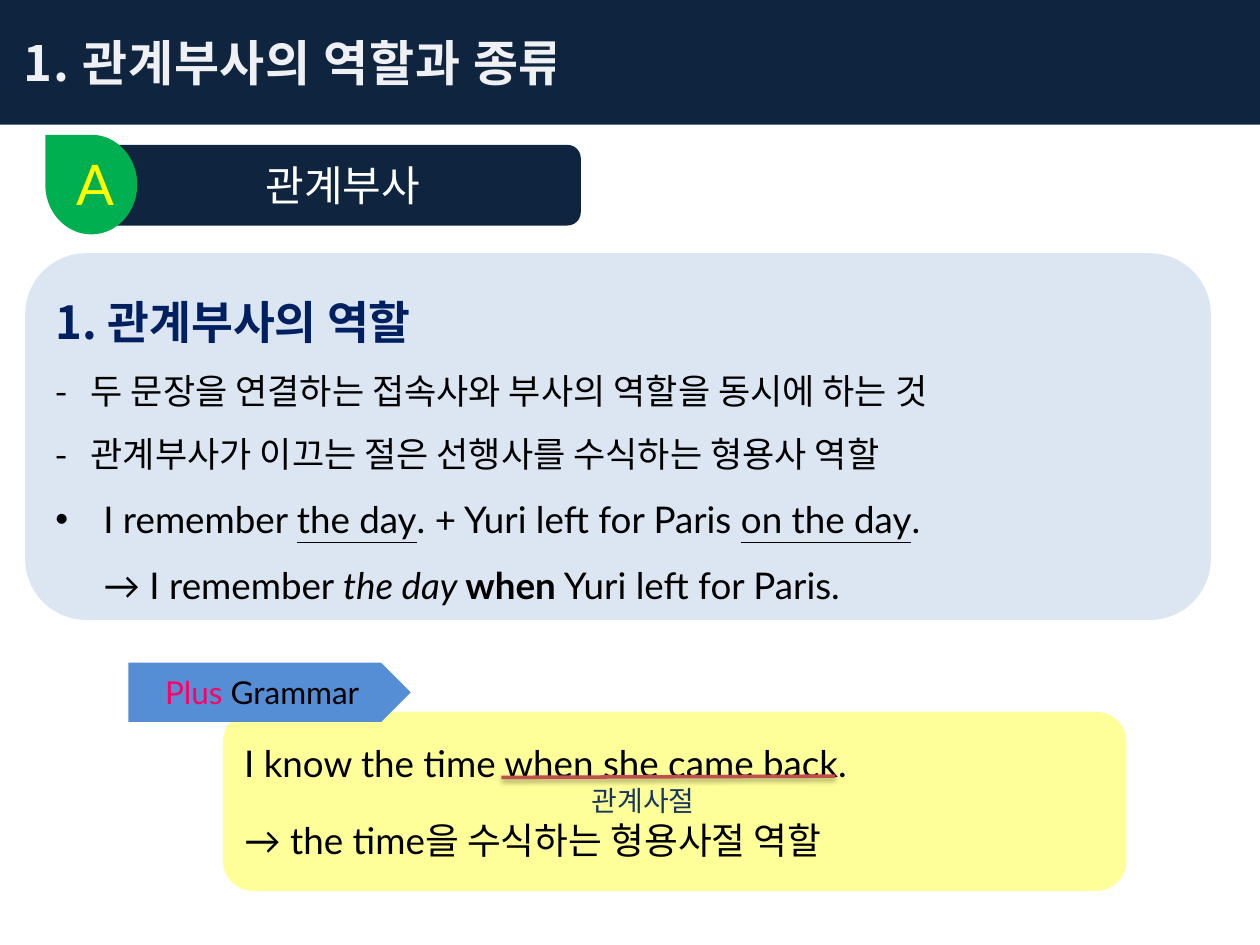
from lxml import etree
from pptx import Presentation
from pptx.dml.color import RGBColor
from pptx.enum.shapes import MSO_CONNECTOR, MSO_SHAPE
from pptx.enum.text import MSO_ANCHOR, PP_ALIGN
from pptx.oxml.ns import qn
from pptx.util import Inches, Pt

ROUND = MSO_SHAPE.FLOWCHART_ALTERNATE_PROCESS
RECT, TEAR, TAG = MSO_SHAPE.RECTANGLE, MSO_SHAPE.TEAR, MSO_SHAPE.PENTAGON
LINE = MSO_CONNECTOR.STRAIGHT
MID, TOP = MSO_ANCHOR.MIDDLE, MSO_ANCHOR.TOP
LEFT, CENTER, FULL = PP_ALIGN.LEFT, PP_ALIGN.CENTER, PP_ALIGN.JUSTIFY

COLS, ROWS = 100, 75  # grid of the 10 x 7.5 inch slide


class Theme:
    latin, hangul = "Lato", "Noto Sans CJK KR"
    navy, pale, green, lemon, blue = "0F243E", "DCE6F2", "00B050", "FFFF99", "558ED5"
    white, snow, black, yellow = "FFFFFF", "FCFCFD", "000000", "FFFF00"
    head, pink, red, note = "002060", "FF0066", "C0504D", "17375E"
    title, big, sub, label, body, text, tag, small = 28, 32, 26, 24, 21, 20, 18, 16


def grid(n):
    return Inches(n / 10)


def rgb(code):
    return RGBColor.from_string(code)


def node(parent, tag, **attrs):
    return etree.SubElement(parent, qn(tag), {k: str(v) for k, v in attrs.items()})


def style(run, size, color, name=Theme.latin, **form):
    font = run.font
    for key, val in dict(form, size=Pt(size), name=name).items():
        setattr(font, key, val)
    font.color.rgb = rgb(color)
    node(font._element, "a:ea", typeface=Theme.hangul)


def bullet(para, mark):
    props = para._p.get_or_add_pPr()
    node(props, "a:buFont", typeface="Arial")
    node(props, "a:buChar", char=mark)


def write(frame, paras, anchor=MID, wrap=True):
    """Each paragraph is (format, runs); each run is (text, format)."""
    frame.word_wrap, frame.vertical_anchor = wrap, anchor
    for i, (form, runs) in enumerate(paras):
        para = frame.paragraphs[0] if i == 0 else frame.add_paragraph()
        form = dict(form)
        mark, hang, left = (form.pop(k, None) for k in ("mark", "hang", "left"))
        for key, val in form.items():
            setattr(para, key, val)
        props = para._p.get_or_add_pPr()
        if left:
            props.set("marL", str(Inches(left)))
        if hang:
            props.set("indent", str(-Inches(hang)))
        if mark:
            bullet(para, mark)
        for text, look in runs:
            run = para.add_run()
            run.text = text
            style(run, **look)


def block(slide, kind, box, fill, paras=(), turn=0):
    shape = slide.shapes.add_shape(kind, *map(grid, box))
    shape.shadow.inherit = False
    shape.fill.solid()
    shape.fill.fore_color.rgb = rgb(fill)
    shape.line.fill.background()
    shape.rotation = turn
    write(shape.text_frame, paras)
    return shape


def label(slide, box, text, size, color):
    frame = slide.shapes.add_textbox(*map(grid, box)).text_frame
    write(frame, [({}, [(text, dict(size=size, color=color))])], TOP)


def rule(slide, ends, color, width):
    line = slide.shapes.add_connector(LINE, *map(grid, ends))
    line.line.color.rgb = rgb(color)
    line.line.width = Pt(width)
    glow = node(line._element.spPr, "a:effectLst")
    shade = node(glow, "a:outerShdw", blurRad=Pt(3.1), dist=Pt(1.6),
                 dir=5400000, rotWithShape=0)
    node(node(shade, "a:srgbClr", val=Theme.black), "a:alpha", val=38000)


def lesson(slide):
    item = dict(size=Theme.text, color=Theme.black, name=Theme.hangul)
    plain = dict(size=Theme.body, color=Theme.black)
    under = dict(plain, underline=True)
    row = dict(alignment=FULL, line_spacing=1.5)
    dash = dict(row, left=0.28, hang=0.28)
    deep = dict(row, left=0.38)
    head = dict(size=Theme.sub, color=Theme.head, name=Theme.hangul, bold=True)
    block(slide, ROUND, (2, 20.1, 94.1, 29.1), Theme.pale, [
        (row, [("1. 관계부사의 역할", head)]),
        (dash, [("-\t두 문장을 연결하는 접속사와 부사의 역할을 동시에 하는 것", item)]),
        (dash, [("-\t관계부사가 이끄는 절은 선행사를 수식하는 형용사 역할", item)]),
        (dict(deep, hang=0.38, mark="•"), [
            ("I remember ", plain), ("the day", under),
            (". + Yuri left for Paris ", plain), ("on the day", under), (".", plain)]),
        (deep, [
            ("→ I remember ", plain), ("the day ", dict(plain, italic=True)),
            ("when", dict(plain, bold=True)), (" Yuri left for Paris.", plain)]),
    ])


def banner(slide):
    look = dict(size=Theme.title, color=Theme.snow, name=Theme.hangul, bold=True)
    bar = block(slide, RECT, (0, 0, COLS, 9.9), Theme.navy,
                [(dict(alignment=LEFT), [("1. 관계부사의 역할과 종류", look)])])
    bar.text_frame.margin_left = grid(1.9)
    props = bar.text_frame.paragraphs[0].runs[0].font._element
    props.set("spc", "50")
    node(props.find(".//" + qn("a:srgbClr")), "a:alpha", val=95000)


def plus(slide):
    plain = dict(size=Theme.body, color=Theme.black)
    tag = dict(size=Theme.tag, color=Theme.pink)
    block(slide, ROUND, (17.7, 56.5, 71.7, 14.2), Theme.lemon, [
        (dict(alignment=LEFT), [("I know the time when she came back.", plain)]),
        (dict(alignment=LEFT, space_before=Pt(19)),
         [("→ the time을 수식하는 형용사절 역할", plain)]),
    ])
    block(slide, TAG, (10.2, 52.6, 22.4, 4.7), Theme.blue, [
        (dict(alignment=CENTER),
         [("Plus ", tag), ("Grammar", dict(tag, color=Theme.black))])])
    rule(slide, (39.8, 61.7, 66.3, 61.6), Theme.red, 2)
    label(slide, (46, 61.7, 13.4, 3.7), "관계사절", Theme.small, Theme.note)


def main():
    deck = Presentation()
    deck.slide_width, deck.slide_height = grid(COLS), grid(ROWS)
    slide = deck.slides.add_slide(deck.slide_layouts[6])

    # Lesson panel
    lesson(slide)

    # Section heading and title bar
    look = dict(size=Theme.label, color=Theme.white, name=Theme.hangul)
    block(slide, ROUND, (8.3, 11.5, 37.8, 6.4), Theme.navy,
          [(dict(alignment=CENTER), [("관계부사", look)])])
    banner(slide)

    # Section letter
    block(slide, TEAR, (3.3, 11, 7.9, 7.3), Theme.green, turn=270)
    label(slide, (5.1, 11.4, 4.7, 6.4), "A", Theme.big, Theme.yellow)

    # Extra grammar
    plus(slide)
    deck.save("out.pptx")


if __name__ == "__main__":
    main()
